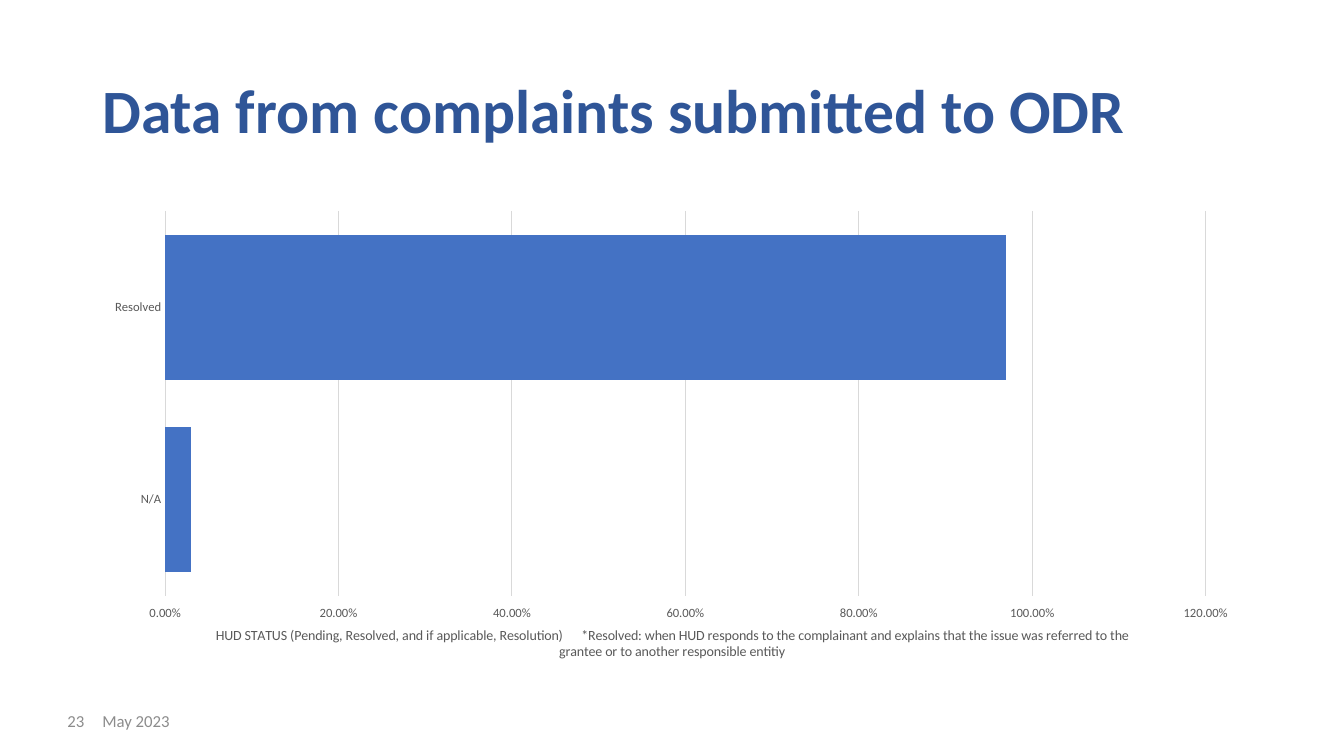
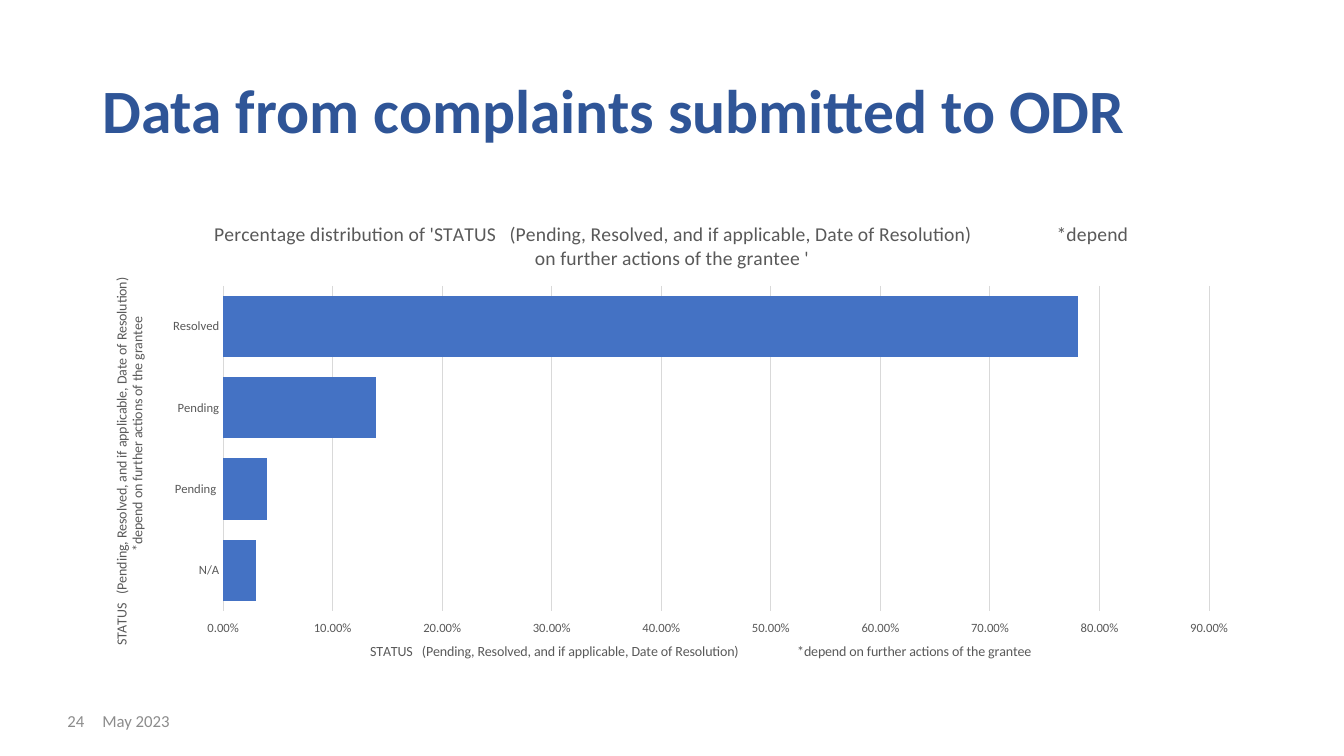
from dataclasses import dataclass
from typing import Any, Optional

import pptx
import pptx.chart.data
import pptx.dml.color
import pptx.enum.chart
import pptx.enum.text
import pptx.oxml
import pptx.oxml.ns
import pptx.util

Pt = pptx.util.Pt
RGBColor = pptx.dml.color.RGBColor

FONT = "Calibri"
TITLE_BLUE = RGBColor(0x2F, 0x55, 0x97)
BAR_BLUE = RGBColor(0x44, 0x72, 0xC4)
FOOTER_GRAY = RGBColor(0x8C, 0x8C, 0x8C)
LABEL_GRAY = RGBColor(0x59, 0x59, 0x59)
GRID_GRAY = RGBColor(0xD9, 0xD9, 0xD9)
BLACK = RGBColor(0, 0, 0)

SLIDE_WIDTH, SLIDE_HEIGHT = 960, 540
MARGIN, CONTENT_WIDTH = 66, 828
CHART_TOP, CHART_HEIGHT = 144, 342.72
FOOTER_TOP, FOOTER_WIDTH, FOOTER_HEIGHT = 500.5, 216, 28.8
NUMBER_LEFT = 41

STATUS = (
    "STATUS   (Pending, Resolved, and if applicable, Date of Resolution)"
    "                   *depend on further actions of the grantee"
)


@dataclass(frozen=True)
class Box:
    left: float
    top: float
    width: float
    height: float


@dataclass(frozen=True)
class Caption:
    text: str
    left: float
    top: float
    size: float = 10


@dataclass(frozen=True)
class ChartPage:
    number: int
    shares: dict[str, float]
    maximum: float
    step: float
    plot: Box
    value_caption: Caption
    category_caption: Optional[Caption] = None
    heading: Optional[Caption] = None


PAGES = [
    ChartPage(
        number=23,
        shares={"Resolved": 0.97, "N/A": 0.03},
        maximum=1.2,
        step=0.2,
        plot=Box(52, 6.7, 743.3, 275),
        value_caption=Caption(
            "HUD STATUS (Pending, Resolved, and if applicable, Resolution)"
            "      *Resolved: when HUD responds to the complainant and explains"
            " that the issue was referred to the grantee or to another"
            " responsible entitiy",
            86.3, 301.5,
        ),
    ),
    ChartPage(
        number=24,
        shares={"Resolved": 0.78, "Pending": 0.14, "Pending ": 0.04, "N/A": 0.03},
        maximum=0.9,
        step=0.1,
        plot=Box(93.4, 60.3, 704.3, 232.1),
        value_caption=Caption(STATUS, 196.6, 312.8),
        category_caption=Caption(STATUS, 12.5, 46),
        heading=Caption(f"Percentage distribution of '{STATUS} '", 84.5, 10.5, 14),
    ),
]


def style_font(font: Any, size: float, color: RGBColor, bold: bool = False) -> None:
    font.name = FONT
    font.size = Pt(size)
    font.bold = bold
    font.color.rgb = color


def add_text(page: Any, box: Box, text: str, size: float, color: RGBColor,
             bold: bool = False, line_spacing: float = 1) -> None:
    shape = page.shapes.add_textbox(
        Pt(box.left), Pt(box.top), Pt(box.width), Pt(box.height))
    frame = shape.text_frame
    frame.word_wrap = True
    frame.vertical_anchor = pptx.enum.text.MSO_ANCHOR.MIDDLE
    frame.text = text
    para = frame.paragraphs[0]
    para.line_spacing = line_spacing
    style_font(para.runs[0].font, size, color, bold)


def set_layout(element: Any, index: int, values: dict[str, Any]) -> None:
    qn = pptx.oxml.ns.qn
    for old in element.findall(qn("c:layout")):
        element.remove(old)
    parts = "".join(f'<c:{tag} val="{value}"/>' for tag, value in values.items())
    layout = pptx.oxml.parse_xml(
        f'<c:layout {pptx.oxml.ns.nsdecls("c")}>'
        f"<c:manualLayout>{parts}</c:manualLayout></c:layout>")
    element.insert(index, layout)


def edges(left: float, top: float) -> dict[str, Any]:
    return {"xMode": "edge", "yMode": "edge",
            "x": left / CONTENT_WIDTH, "y": top / CHART_HEIGHT}


def set_caption(title: Any, caption: Caption, rotated: bool = False) -> None:
    frame = title.text_frame
    frame.text = caption.text
    style_font(frame.paragraphs[0].runs[0].font, caption.size, LABEL_GRAY)
    if rotated:
        properties = frame._txBody.bodyPr
        properties.set("rot", "-5400000")
        properties.set("vert", "horz")
    set_layout(title._element, 1, edges(caption.left, caption.top))


def style_axis(axis: Any, caption: Optional[Caption], rotated: bool = False) -> None:
    axis.major_tick_mark = pptx.enum.chart.XL_TICK_MARK.NONE
    axis.minor_tick_mark = pptx.enum.chart.XL_TICK_MARK.NONE
    style_font(axis.tick_labels.font, 9, LABEL_GRAY)
    axis.has_title = caption is not None
    if caption:
        set_caption(axis.axis_title, caption, rotated)


def style_line(line: Any) -> None:
    line.color.rgb = GRID_GRAY
    line.width = Pt(0.75)


def add_bar_chart(page: Any, content: ChartPage) -> None:
    data = pptx.chart.data.CategoryChartData(number_format="0.00%")
    data.categories = list(content.shares)
    data.add_series("Series 1", list(content.shares.values()))
    chart = page.shapes.add_chart(
        pptx.enum.chart.XL_CHART_TYPE.BAR_CLUSTERED, Pt(MARGIN), Pt(CHART_TOP),
        Pt(CONTENT_WIDTH), Pt(CHART_HEIGHT), data).chart
    style_font(chart.font, 10, BLACK)
    chart.has_legend = False
    chart.has_title = content.heading is not None
    if content.heading:
        set_caption(chart.chart_title, content.heading)

    categories = chart.category_axis
    style_axis(categories, content.category_caption, rotated=True)
    categories.reverse_order = True
    categories.has_major_gridlines = False
    style_line(categories.format.line)

    values = chart.value_axis
    style_axis(values, content.value_caption)
    values.tick_label_position = pptx.enum.chart.XL_TICK_LABEL_POSITION.HIGH
    values.minimum_scale = 0
    values.maximum_scale = content.maximum
    values.major_unit = content.step
    values.tick_labels.number_format = "0.00%"
    values.tick_labels.number_format_is_linked = False
    values.format.line.fill.background()
    values.has_major_gridlines = True
    style_line(values.major_gridlines.format.line)

    plot = chart.plots[0]
    plot.gap_width = 33
    plot.overlap = -30
    plot.vary_by_categories = False
    fill = plot.series[0].format.fill
    fill.solid()
    fill.fore_color.rgb = BAR_BLUE

    area = content.plot
    set_layout(chart._chartSpace.chart.plotArea, 0, {
        "layoutTarget": "inner", **edges(area.left, area.top),
        "w": area.width / CONTENT_WIDTH, "h": area.height / CHART_HEIGHT})


def add_page(deck: Any, content: ChartPage) -> None:
    page = deck.slides.add_slide(deck.slide_layouts[6])
    add_text(page, Box(MARGIN, 28.8, CONTENT_WIDTH, 104.4),
             "Data from complaints submitted to ODR", 44, TITLE_BLUE, True, 0.9)
    for left, text in ((MARGIN, "May 2023"), (NUMBER_LEFT, str(content.number))):
        add_text(page, Box(left, FOOTER_TOP, FOOTER_WIDTH, FOOTER_HEIGHT),
                 text, 12, FOOTER_GRAY)
    add_bar_chart(page, content)


def main() -> None:
    deck = pptx.Presentation()
    deck.slide_width = Pt(SLIDE_WIDTH)
    deck.slide_height = Pt(SLIDE_HEIGHT)
    for content in PAGES:
        add_page(deck, content)
    deck.save("out.pptx")


if __name__ == "__main__":
    main()
